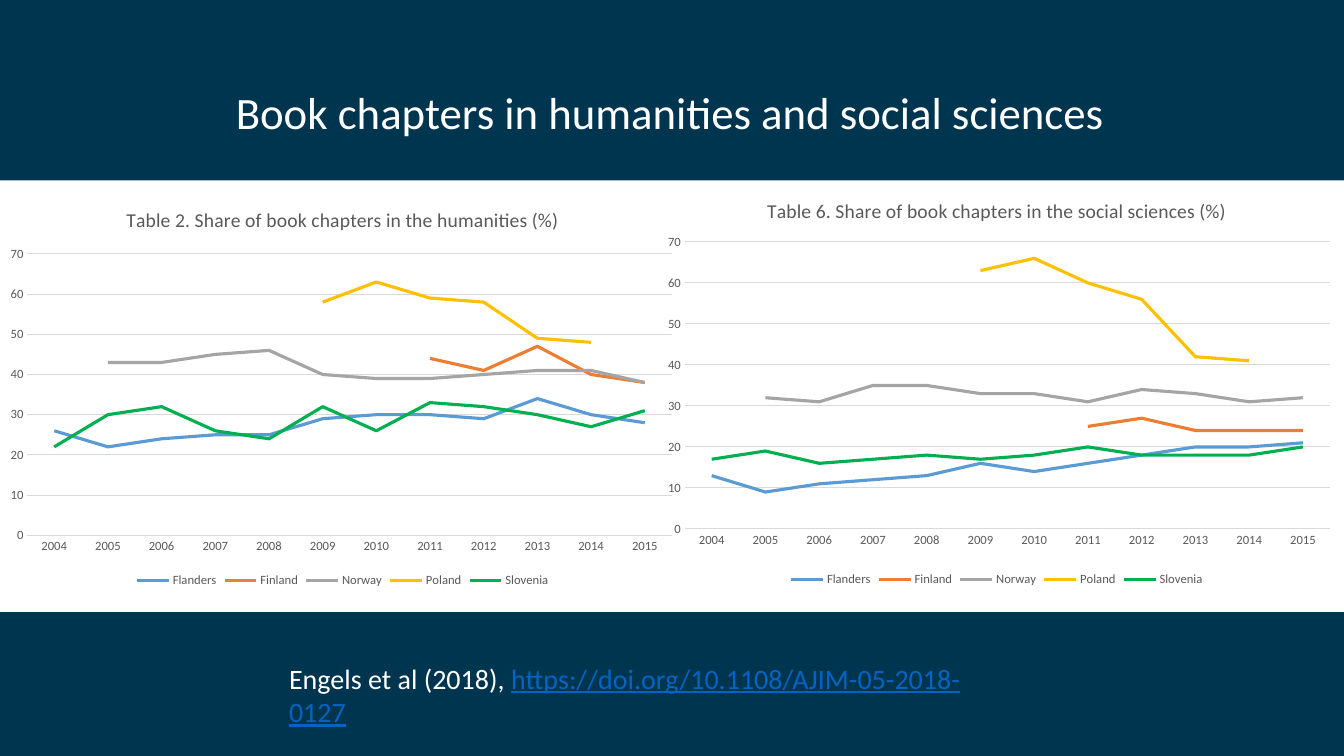
import pptx
import pptx.util
import pptx.dml.color
import pptx.chart.data
import pptx.enum.chart
import pptx.enum.shapes
import pptx.enum.text
import pptx.oxml

Pt = pptx.util.Pt
GREY = "595959"
GRID = "D9D9D9"


def color(value):
    return pptx.dml.color.RGBColor.from_string(value)


def format_font(font, size, value):
    font.name = "Calibri"
    font.size = Pt(size)
    font.bold = False
    font.color.rgb = color(value)


years = [str(year) for year in range(2004, 2016)]
line_colors = {
    "Flanders": "5B9BD5",
    "Finland": "ED7D31",
    "Norway": "A5A5A5",
    "Poland": "FFC000",
    "Slovenia": "00B050",
}
# Each series lists its first year and then its yearly shares
charts = [
    {
        "title": "Table 2. Share of book chapters in the humanities (%)",
        "position": (0, 135.4, 489.6, 287.3),
        "plot": {"x": 0.04, "y": 0.16, "w": 0.94, "h": 0.7},
        "shares": {
            "Flanders": (2004, [26, 22, 24, 25, 25, 29, 30, 30, 29, 34, 30, 28]),
            "Finland": (2011, [44, 41, 47, 40, 38]),
            "Norway": (2005, [43, 43, 45, 46, 40, 39, 39, 40, 41, 41, 38]),
            "Poland": (2009, [58, 63, 59, 58, 49, 48]),
            "Slovenia": (2004, [22, 30, 32, 26, 24, 32, 26, 33, 32, 30, 27, 31]),
        },
    },
    {
        "title": "Table 6. Share of book chapters in the social sciences (%)",
        "position": (464.4, 128.9, 495.4, 293),
        "plot": {"x": 0.05, "y": 0.15, "w": 0.93, "h": 0.7},
        "shares": {
            "Flanders": (2004, [13, 9, 11, 12, 13, 16, 14, 16, 18, 20, 20, 21]),
            "Finland": (2011, [25, 27, 24, 24, 24]),
            "Norway": (2005, [32, 31, 35, 35, 33, 33, 31, 34, 33, 31, 32]),
            "Poland": (2009, [63, 66, 60, 56, 42, 41]),
            "Slovenia": (2004, [17, 19, 16, 17, 18, 17, 18, 20, 18, 18, 18, 20]),
        },
    },
]

# Slide and background
presentation = pptx.Presentation()
presentation.slide_width = Pt(960)
presentation.slide_height = Pt(540)
slide = presentation.slides.add_slide(presentation.slide_layouts[5])
slide.background.fill.solid()
slide.background.fill.fore_color.rgb = color("003550")

# Title
title = slide.shapes.title
title.left, title.top, title.width, title.height = Pt(64.8), Pt(35.3), Pt(828), Pt(93.6)
title.text_frame.vertical_anchor = pptx.enum.text.MSO_ANCHOR.MIDDLE
paragraph = title.text_frame.paragraphs[0]
paragraph.alignment = pptx.enum.text.PP_ALIGN.CENTER
paragraph.line_spacing = 0.9
run = paragraph.add_run()
run.text = "Book chapters in humanities and social sciences"
format_font(run.font, 32, "FFFFFF")

# White band behind the charts
band = slide.shapes.add_shape(
    pptx.enum.shapes.MSO_SHAPE.RECTANGLE, Pt(0), Pt(128.9), Pt(960), Pt(308.2))
band.shadow.inherit = False
band.fill.solid()
band.fill.fore_color.rgb = color("FFFFFF")
band.line.fill.background()

# Line charts
for details in charts:
    chart_data = pptx.chart.data.CategoryChartData()
    chart_data.categories = years
    for country, (first_year, shares) in details["shares"].items():
        before = first_year - 2004
        after = len(years) - before - len(shares)
        chart_data.add_series(country, [None] * before + shares + [None] * after)
    chart = slide.shapes.add_chart(
        pptx.enum.chart.XL_CHART_TYPE.LINE,
        *[Pt(length) for length in details["position"]], chart_data).chart
    format_font(chart.font, 10, "000000")

    # Chart title and legend
    run = chart.chart_title.text_frame.paragraphs[0].add_run()
    run.text = details["title"]
    format_font(run.font, 14, GREY)
    chart.chart_title.include_in_layout = False
    chart.has_legend = True
    chart.legend.position = pptx.enum.chart.XL_LEGEND_POSITION.BOTTOM
    chart.legend.include_in_layout = False
    format_font(chart.legend.font, 9, GREY)

    # Axes
    for axis in (chart.category_axis, chart.value_axis):
        axis.major_tick_mark = pptx.enum.chart.XL_TICK_MARK.NONE
        axis.minor_tick_mark = pptx.enum.chart.XL_TICK_MARK.NONE
        format_font(axis.tick_labels.font, 9, GREY)
    chart.value_axis.minimum_scale = 0
    chart.value_axis.maximum_scale = 70
    chart.value_axis.major_unit = 10
    chart.value_axis.has_major_gridlines = True
    chart.value_axis.format.line.fill.background()
    for line in (chart.category_axis.format.line,
                 chart.value_axis.major_gridlines.format.line):
        line.color.rgb = color(GRID)
        line.width = Pt(0.75)

    # Series lines
    for series in chart.plots[0].series:
        series.smooth = False
        series.marker.style = pptx.enum.chart.XL_MARKER_STYLE.NONE
        series.format.line.color.rgb = color(line_colors[series.name])
        series.format.line.width = Pt(2.25)
    chart.plots[0].vary_by_categories = False

    # Inner plot area as fractions of the chart
    plot_area = chart.element.find(".//{*}plotArea")
    for layout in plot_area.findall("{*}layout"):
        plot_area.remove(layout)
    edges = "".join(f'<c:{side}Mode val="edge"/>' for side in "xy")
    sizes = "".join(f'<c:{side} val="{value}"/>' for side, value in details["plot"].items())
    plot_area.insert(0, pptx.oxml.parse_xml(
        '<c:layout xmlns:c="http://schemas.openxmlformats.org/drawingml/2006/chart">'
        f'<c:manualLayout><c:layoutTarget val="inner"/>{edges}{sizes}'
        '</c:manualLayout></c:layout>'))

# Reference
reference = slide.shapes.add_textbox(Pt(199.4), Pt(468.7), Pt(529.2), Pt(31.7))
reference.text_frame.word_wrap = True
paragraph = reference.text_frame.paragraphs[0]
for text, value, underlined in [
    ("Engels et al (2018), ", "FFFFFF", False),
    ("https://doi.org/10.1108/AJIM-05-2018-0127", "0563C1", True),
]:
    run = paragraph.add_run()
    run.text = text
    format_font(run.font, 20, value)
    run.font.underline = underlined

presentation.save("out.pptx")
